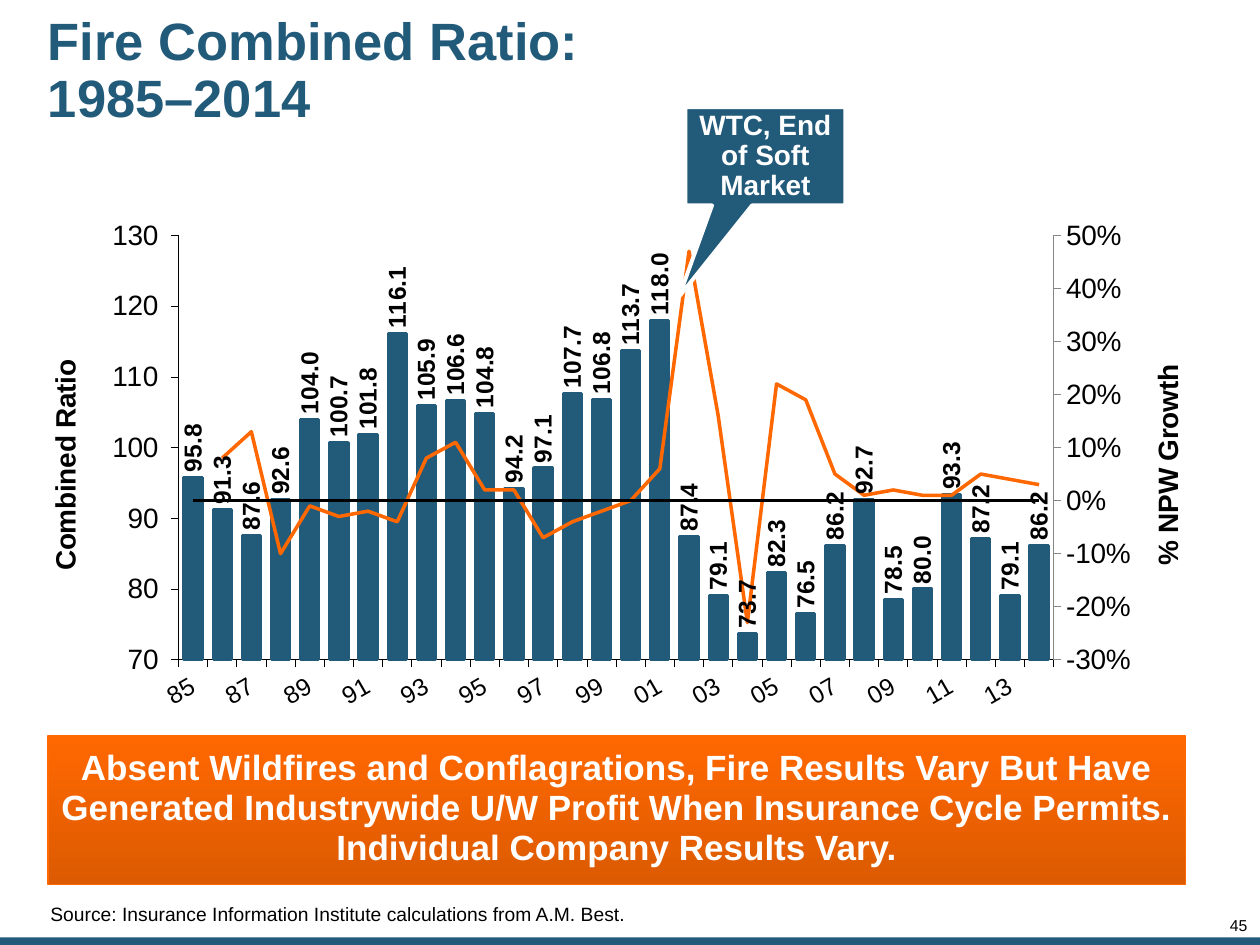
from copy import deepcopy
from dataclasses import dataclass

from pptx import Presentation
from pptx.chart.axis import ValueAxis
from pptx.chart.data import CategoryChartData
from pptx.dml.color import RGBColor
from pptx.enum.chart import XL_CHART_TYPE as Kind, XL_LABEL_POSITION as Spot
from pptx.enum.chart import XL_MARKER_STYLE as Marker, XL_TICK_MARK as Tick
from pptx.enum.shapes import MSO_SHAPE as Form
from pptx.enum.text import MSO_ANCHOR as Anchor, PP_ALIGN as Align
from pptx.oxml import parse_xml
from pptx.oxml.ns import nsdecls, qn
from pptx.util import Inches, Pt


@dataclass(frozen=True)
class Theme:
    font: str = "Arial"
    blue: RGBColor = RGBColor(0x22, 0x5A, 0x7A)
    orange: RGBColor = RGBColor(0xFF, 0x68, 0x01)
    rust: RGBColor = RGBColor(0xDC, 0x5A, 0x01)
    black: RGBColor = RGBColor(0, 0, 0)
    gray: RGBColor = RGBColor(0x86, 0x86, 0x86)
    white: RGBColor = RGBColor(0xFF, 0xFF, 0xFF)
    title: int = 30
    banner: int = 20
    axis: int = 16
    label: int = 14
    source: int = 11
    number: int = 9


theme = Theme()


def style(font, size, color, bold=False):
    font.name, font.size, font.bold = theme.font, Pt(size), bold
    font.color.rgb = color


def write(shape, text, size, color, bold, align, anchor, space, pads):
    """Fill a shape with one paragraph; pads are left, top, right, bottom."""
    frame = shape.text_frame
    frame.word_wrap, frame.vertical_anchor = True, anchor
    (frame.margin_left, frame.margin_top,
     frame.margin_right, frame.margin_bottom) = map(Inches, pads)
    frame.text = text
    para = frame.paragraphs[0]
    para.alignment, para.line_spacing = align, space
    for run in para.runs:
        style(run.font, size, color, bold)


deck = Presentation()
deck.slide_width, deck.slide_height = Inches(10), Inches(7.5)
slide = deck.slides.add_slide(deck.slide_layouts[5])
shapes = slide.shapes

bar = shapes.add_shape(Form.RECTANGLE, Inches(0), Inches(7.44), Inches(10), Inches(0.06))
bar.shadow.inherit = False
bar.fill.solid()
bar.fill.fore_color.rgb = theme.blue
bar.line.fill.background()

title = shapes.title
title.left, title.top = Inches(0.33), Inches(0.1)
title.width, title.height = Inches(8.09), Inches(0.94)
write(title, "Fire Combined Ratio: \v1985–2014", theme.title, theme.blue, True,
      Align.LEFT, Anchor.MIDDLE, 0.9, [0.05] * 4)

# Chart data
ratios = [95.8, 91.3, 87.6, 92.6, 104, 100.7, 101.8, 116.1, 105.9, 106.6,
          104.8, 94.2, 97.1, 107.7, 106.8, 113.7, 118, 87.4, 79.1, 73.7,
          82.3, 76.5, 86.2, 92.7, 78.5, 80, 93.3, 87.2, 79.1, 86.2]
growth = [None, 0.08, 0.13, -0.1, -0.01, -0.03, -0.02, -0.04, 0.08, 0.11,
          0.02, 0.02, -0.07, -0.04, -0.02, 0, 0.06, 0.47, 0.16, -0.23,
          0.22, 0.19, 0.05, 0.01, 0.02, 0.01, 0.01, 0.05, 0.04, 0.03]
zeros = [0] * len(ratios)
data = CategoryChartData()
data.categories = [f"{year % 100:02d}" for year in range(1985, 2015)]
for count, values in enumerate((ratios, growth, [1], zeros), 1):
    data.add_series(f"Series {count}", values)
chart = shapes.add_chart(Kind.COLUMN_CLUSTERED, Inches(0.33), Inches(1.53),
                         Inches(9.13), Inches(4.18), data).chart
chart.has_legend = chart.has_title = False
style(chart.font, theme.axis, theme.black)

# Move all but the first series to lines on a second pair of axes
area = chart.element.find(".//" + qn("c:plotArea"))
bars = area.find(qn("c:barChart"))
lines = parse_xml(
    f'<c:lineChart {nsdecls("c")}><c:grouping val="standard"/>'
    '<c:varyColors val="0"/><c:marker val="1"/>'
    '<c:axId val="501"/><c:axId val="502"/></c:lineChart>')
for ser in bars.findall(qn("c:ser"))[1:]:
    flag = ser.find(qn("c:invertIfNegative"))
    if flag is not None:
        ser.remove(flag)
    lines.find(qn("c:marker")).addprevious(ser)
bars.addnext(lines)

cat, val = area.find(qn("c:catAx")), area.find(qn("c:valAx"))
cat2, val2 = deepcopy(cat), deepcopy(val)
val.addnext(val2)
val2.addnext(cat2)
for axis, own, other in ((cat2, "501", "502"), (val2, "502", "501")):
    axis.find(qn("c:axId")).set("val", own)
    axis.find(qn("c:crossAx")).set("val", other)
cat2.find(qn("c:delete")).set("val", "1")
val2.find(qn("c:axPos")).set("val", "r")
val2.find(qn("c:crosses")).set("val", "max")

for old in area.findall(qn("c:layout")):
    area.remove(old)
area.insert(0, parse_xml(
    f'<c:layout {nsdecls("c")}><c:manualLayout><c:layoutTarget val="inner"/>'
    '<c:xMode val="edge"/><c:yMode val="edge"/><c:x val="0.119"/><c:y val="0.081"/>'
    '<c:w val="0.761"/><c:h val="0.806"/></c:manualLayout></c:layout>'))

# Axes
for node, name, low, high, step, code, color in (
        (val, "Combined Ratio", 70, 130, 10, r"#,##0_);[Red]\(#,##0\)", theme.black),
        (val2, "% NPW Growth", -0.3, 0.5, 0.1, "0%", theme.gray)):
    axis = ValueAxis(node)
    axis.has_major_gridlines = False
    axis.minimum_scale, axis.maximum_scale, axis.major_unit = low, high, step
    axis.major_tick_mark = Tick.OUTSIDE
    axis.tick_labels.number_format = code
    axis.tick_labels.number_format_is_linked = False
    style(axis.tick_labels.font, theme.axis, theme.black)
    axis.format.line.color.rgb, axis.format.line.width = color, Pt(0.38)
    frame = axis.axis_title.text_frame
    frame.text = name
    style(frame.paragraphs[0].runs[0].font, theme.axis, theme.black, True)
    node.find(qn("c:title")).find(".//" + qn("a:bodyPr")).set("rot", "-5400000")

years = chart.category_axis
years.major_tick_mark = Tick.OUTSIDE
style(years.tick_labels.font, theme.label, theme.black)
years.format.line.color.rgb, years.format.line.width = theme.black, Pt(0.38)
cat.find(qn("c:txPr")).find(qn("a:bodyPr")).set("rot", "-1800000")
cat.find(qn("c:noMultiLvlLbl")).addprevious(
    parse_xml(f'<c:tickLblSkip {nsdecls("c")} val="2"/>'))

# Series
columns, curves = chart.plots
columns.gap_width, columns.vary_by_categories = 60, False
ratio = columns.series[0]
ratio.format.fill.solid()
ratio.format.fill.fore_color.rgb = theme.blue
ratio.format.line.color.rgb, ratio.format.line.width = theme.blue, Pt(1.75)
labels = ratio.data_labels
labels.show_value, labels.position = True, Spot.OUTSIDE_END
labels.number_format = r"#,##0.0_);[Red]\(#,##0.0\)"
labels.number_format_is_linked = False
style(labels.font, theme.label, theme.black, True)
bars.find(".//" + qn("c:dLbls")).find(".//" + qn("a:bodyPr")).set("rot", "-5400000")

for curve, color in zip(curves.series, (theme.orange, theme.black, theme.black)):
    curve.smooth = False
    curve.marker.style = Marker.NONE
    curve.format.line.color.rgb, curve.format.line.width = color, Pt(2)

# Text around the chart
banner = shapes.add_shape(Form.RECTANGLE, Inches(0.38), Inches(5.84), Inches(9.03), Inches(1.18))
banner.shadow.inherit = False
banner.fill.gradient()
banner.fill.gradient_angle = 270
for stop, color, place in zip(banner.fill.gradient_stops, (theme.orange, theme.rust), (0, 1)):
    stop.color.rgb, stop.position = color, place
banner.line.color.rgb, banner.line.width = theme.orange, Pt(1)
write(banner, "Absent Wildfires and Conflagrations, Fire Results Vary But Have "
      "Generated Industrywide U/W Profit When Insurance Cycle Permits. "
      "Individual Company Results Vary.", theme.banner, theme.white, True,
      Align.CENTER, Anchor.MIDDLE, 0.95, [0.1, 0.05, 0.1, 0.07])

source = shapes.add_textbox(Inches(0), Inches(7.02), Inches(8.28), Inches(0.48))
write(source, "Source: Insurance Information Institute calculations from A.M. Best.",
      theme.source, theme.black, False, Align.LEFT, Anchor.BOTTOM, 0.9, [0.4, 0, 0, 0.15])

number = shapes.add_textbox(Inches(9.41), Inches(7.29), Inches(0.49), Inches(0.13))
write(number, "45", theme.number, theme.black, False, Align.RIGHT, Anchor.TOP, 0.85, [0] * 4)

callout = shapes.add_shape(Form.RECTANGULAR_CALLOUT, Inches(5.44), Inches(0.85),
                           Inches(1.27), Inches(0.78))
callout.adjustments[0], callout.adjustments[1] = -0.54, 1.43
callout.shadow.inherit = False
callout.fill.solid()
callout.fill.fore_color.rgb = theme.blue
callout.line.color.rgb, callout.line.width = theme.white, Pt(2.25)
write(callout, "WTC, End of Soft Market", theme.axis, theme.white, True,
      Align.CENTER, Anchor.MIDDLE, 0.9, [0.1] * 4)

deck.save("out.pptx")
